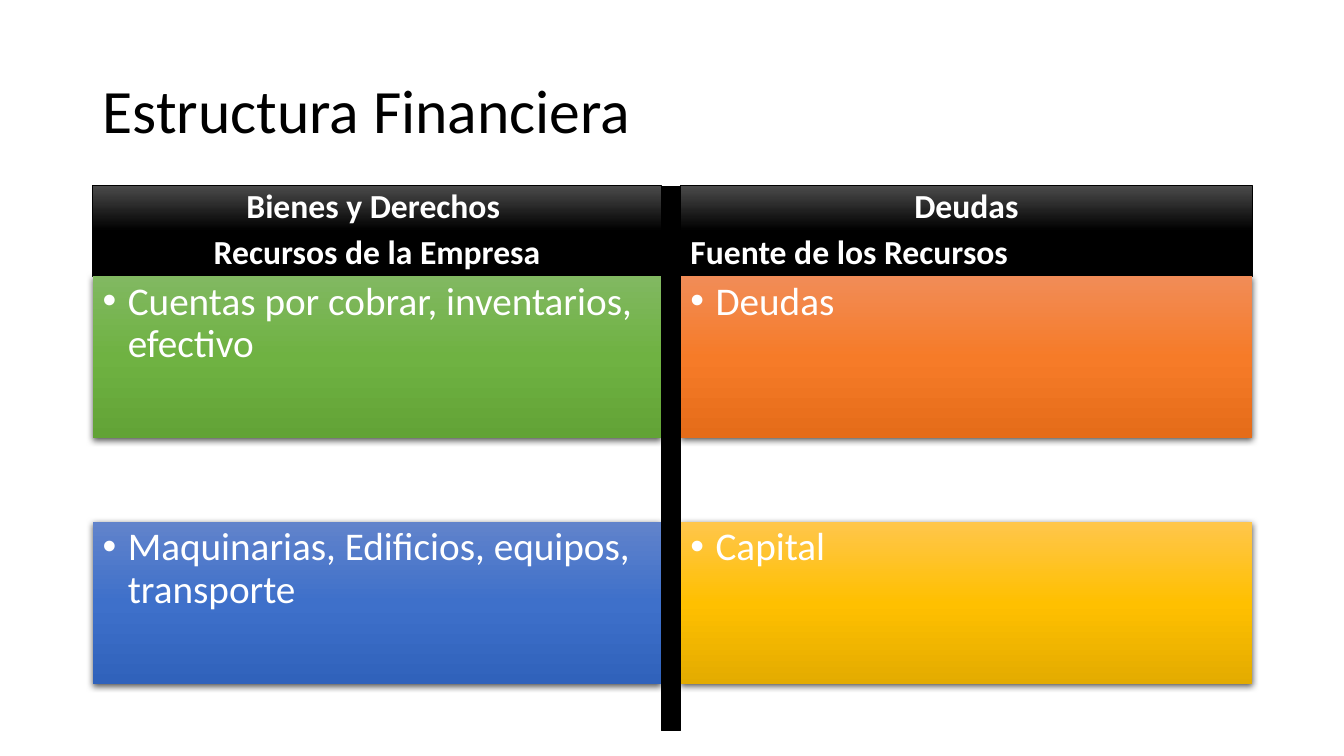
from copy import deepcopy
from dataclasses import dataclass

from lxml.etree import SubElement
from pptx import Presentation
from pptx.dml.color import RGBColor
from pptx.enum.shapes import MSO_SHAPE as Shape
from pptx.enum.text import MSO_ANCHOR as Anchor, PP_ALIGN as Align
from pptx.oxml.ns import qn
from pptx.util import Inches, Pt


@dataclass(frozen=True)
class Theme:
    font: str = "Calibri"
    title_size: int = 44
    header_size: int = 24
    body_size: int = 28
    ink: str = "000000"
    paper: str = "FFFFFF"
    header: tuple = ("4B4B4B", "000000", "000000")
    green: tuple = ("81B861", "6FB242", "62A336")
    blue: tuple = ("6183CB", "3E70CA", "3062BB")
    orange: tuple = ("F18C57", "F67B28", "E56C19")
    gold: tuple = ("FFC64B", "FFC000", "E3AB00")


THEME = Theme()

# Grid tracks in inches: (start, extent)
FULL_WIDTH = (0.92, 11.5)
ASSETS, DIVIDER, SOURCES = (0.92, 5.64), (6.56, 0.19), (6.75, 5.67)
TITLE_ROW, HEADER_ROW = (0.4, 1.45), (1.84, 0.9)
UPPER_ROW, LOWER_ROW = (2.74, 1.61), (5.18, 1.61)
DIVIDER_ROW = (1.85, 5.4)


def grid_cell(column, row):
    """Left, top, width and height of the place where two tracks cross."""
    return [Inches(value) for pair in zip(column, row) for value in pair]


def add_rectangle(slide, column, row):
    box = slide.shapes.add_shape(Shape.RECTANGLE, *grid_cell(column, row))
    box.shadow.inherit = False
    return box


def outline(box, width):
    box.line.color.rgb = RGBColor.from_string(THEME.ink)
    box.line.width = Pt(width)


def fill_gradient(box, colours):
    """Fill from top to bottom with three evenly spaced colours."""
    box.fill.gradient()
    box.fill.gradient_angle = 270
    stop_list = box.element.spPr.find(qn("a:gradFill")).find(qn("a:gsLst"))
    stop_list.append(deepcopy(stop_list[-1]))
    for index, (stop, colour) in enumerate(zip(box.fill.gradient_stops, colours)):
        stop.position = index / 2
        stop.color.rgb = RGBColor.from_string(colour)


def add_shadow(box):
    effects = box.element.spPr.find(qn("a:effectLst"))
    shadow = SubElement(effects, qn("a:outerShdw"), blurRad=str(Pt(4.5)),
                        dist=str(Pt(1.5)), dir="5400000", algn="ctr", rotWithShape="0")
    colour = SubElement(shadow, qn("a:srgbClr"), val=THEME.ink)
    SubElement(colour, qn("a:alpha"), val="63000")


def add_bullet(para):
    properties = para._p.get_or_add_pPr()
    properties.set("marL", str(Inches(0.25)))
    properties.set("indent", str(Inches(-0.25)))
    SubElement(properties, qn("a:buFont"), typeface="Arial")
    SubElement(properties, qn("a:buChar"), char="•")


def write(para, text, size, colour, spacing, before=0, align=Align.LEFT, bold=False):
    para.alignment = align
    para.line_spacing = spacing
    para.space_before = Pt(before)
    span = para.add_run()
    span.text = text
    span.font.name = THEME.font
    span.font.size = Pt(size)
    span.font.bold = bold
    span.font.color.rgb = RGBColor.from_string(colour)


def add_title(slide, text):
    frame = slide.shapes.add_textbox(*grid_cell(FULL_WIDTH, TITLE_ROW)).text_frame
    frame.word_wrap = True
    frame.vertical_anchor = Anchor.MIDDLE
    write(frame.paragraphs[0], text, THEME.title_size, THEME.ink, 0.9)


def add_header(slide, column, lines):
    box = add_rectangle(slide, column, HEADER_ROW)
    fill_gradient(box, THEME.header)
    outline(box, 0.5)
    frame = box.text_frame
    frame.vertical_anchor = Anchor.BOTTOM
    for index, (text, align) in enumerate(lines):
        para = frame.add_paragraph() if index else frame.paragraphs[0]
        write(para, text, THEME.header_size, THEME.paper, 0.8, 10, align, bold=True)


def add_panel(slide, column, row, colours, text):
    box = add_rectangle(slide, column, row)
    fill_gradient(box, colours)
    box.line.fill.background()
    add_shadow(box)
    frame = box.text_frame
    frame.vertical_anchor = Anchor.TOP
    para = frame.paragraphs[0]
    write(para, text, THEME.body_size, THEME.paper, 0.9, 10)
    add_bullet(para)


def add_divider(slide):
    bar = add_rectangle(slide, DIVIDER, DIVIDER_ROW)
    bar.fill.solid()
    bar.fill.fore_color.rgb = RGBColor.from_string(THEME.ink)
    outline(bar, 1)


def main():
    deck = Presentation()
    deck.slide_width, deck.slide_height = Inches(13.33), Inches(7.5)
    slide = deck.slides.add_slide(deck.slide_layouts[6])

    add_title(slide, "Estructura Financiera")
    add_header(slide, ASSETS, [("Bienes y Derechos ", Align.CENTER),
                               ("Recursos de la Empresa", Align.CENTER)])
    add_header(slide, SOURCES, [("Deudas", Align.CENTER),
                                ("Fuente de los Recursos", Align.LEFT)])
    panels = [
        (ASSETS, LOWER_ROW, THEME.blue, "Maquinarias, Edificios, equipos, transporte"),
        (SOURCES, LOWER_ROW, THEME.gold, "Capital"),
        (ASSETS, UPPER_ROW, THEME.green, "Cuentas por cobrar, inventarios, efectivo"),
        (SOURCES, UPPER_ROW, THEME.orange, "Deudas"),
    ]
    for column, row, colours, text in panels:
        add_panel(slide, column, row, colours, text)
    add_divider(slide)

    deck.save("out.pptx")


if __name__ == "__main__":
    main()
